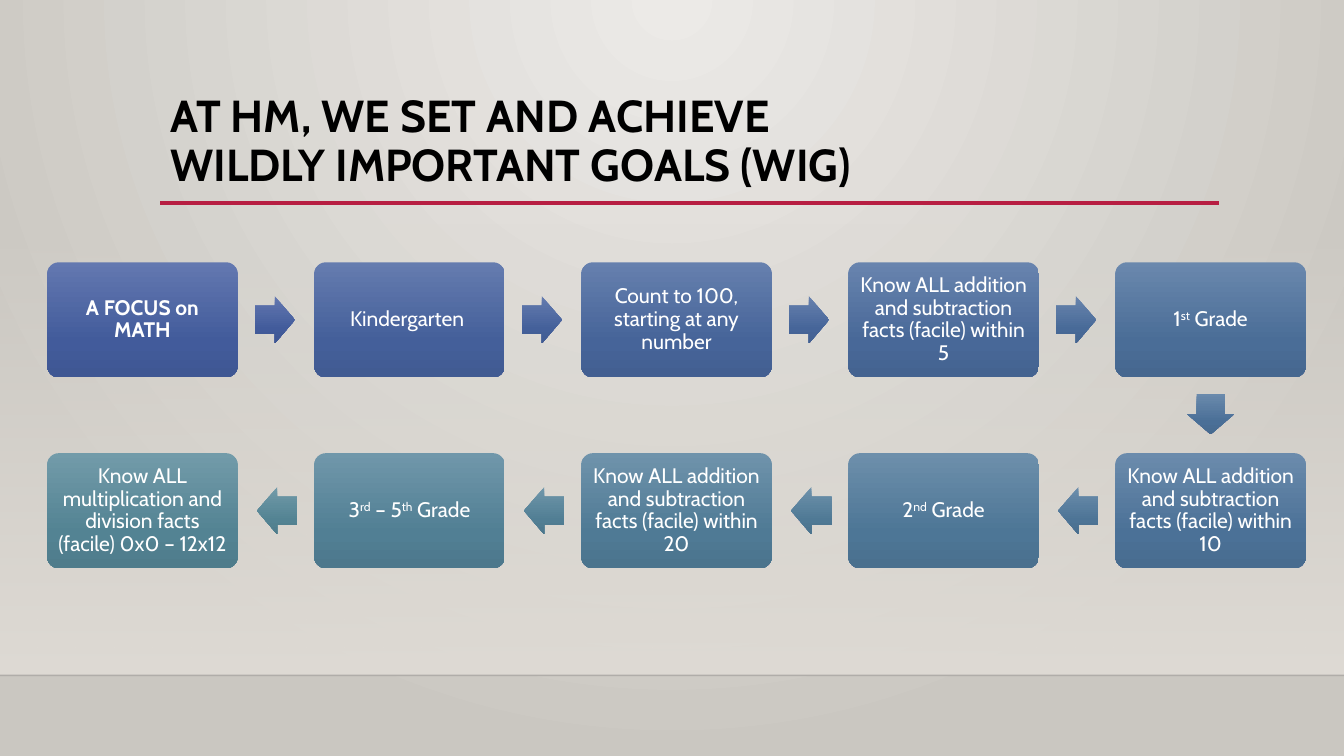
from lxml import etree
from pptx import Presentation
from pptx.dml.color import RGBColor
from pptx.enum import shapes, text
from pptx.oxml import ns
from pptx.util import Cm, Pt

FONT = "Cabin"
BLACK = RGBColor(0x00, 0x00, 0x00)
WHITE = RGBColor(0xFF, 0xFF, 0xFF)
CRIMSON = RGBColor(0xB7, 0x1E, 0x42)
SHELF = RGBColor(0x00, 0x00, 0x01)
WALL = RGBColor(0xDF, 0xDB, 0xD5)
GLOW = RGBColor(0xEC, 0xEA, 0xE7)
STONE = RGBColor(0xCA, 0xC7, 0xC1)
# Gradient stops (position, colour) of the first and last step
INDIGO = [(0, RGBColor(0x63, 0x78, 0xB0)), (69, RGBColor(0x42, 0x5B, 0x9B)),
          (100, RGBColor(0x3F, 0x57, 0x93))]
TEAL = [(0, RGBColor(0x72, 0x9B, 0xA9)), (69, RGBColor(0x53, 0x83, 0x93)),
        (100, RGBColor(0x4F, 0x7C, 0x8B))]

WIDTH, HEIGHT = Cm(33.87), Cm(19.05)
COLUMNS = 5
FACTS = "Know ALL addition and subtraction facts (facile) within "
STEPS = [  # text between carets is raised
    "A FOCUS on MATH", "Kindergarten ", "Count to 100, starting at any number",
    FACTS + "5", "1^st^ Grade", FACTS + "10", "2^nd^ Grade", FACTS + "20",
    "3^rd^ – 5^th^ Grade",
    "Know ALL multiplication and division facts (facile) 0x0 – 12x12",
]


def add_xml(parent, tag, **attributes):
    return etree.SubElement(parent, ns.qn(tag), attributes)


def set_gradient(fill, owner, stops, radial=False):
    """Fill with (position, colour[, opacity]) stops, downwards or from the top centre."""
    fill.gradient()
    gradient = owner.find(".//" + ns.qn("a:gradFill"))
    for child in list(gradient):
        gradient.remove(child)
    gradient.set("rotWithShape", "0")
    stop_list = add_xml(gradient, "a:gsLst")
    for position, colour, *opacity in stops:
        stop = add_xml(stop_list, "a:gs", pos=str(position * 1000))
        tint = add_xml(stop, "a:srgbClr", val=str(colour))
        if opacity:
            add_xml(tint, "a:alpha", val=str(opacity[0] * 1000))
    if radial:
        circle = add_xml(gradient, "a:path", path="circle")
        add_xml(circle, "a:fillToRect", l="43000", t="0", r="43000", b="100000")
    else:
        add_xml(gradient, "a:lin", ang="5400000", scaled="0")


def blend_stops(share):
    return [(position, RGBColor(*(round(a + (b - a) * share) for a, b in zip(first, last))))
            for (position, first), (_, last) in zip(INDIGO, TEAL)]


def add_block(page, kind, left, top, width, height, stops):
    block = page.shapes.add_shape(kind, left, top, width, height)
    block.shadow.inherit = False
    block.line.fill.background()
    set_gradient(block.fill, block.element, stops)
    return block


def add_rule(page, left, right, y, colour, weight):
    rule = page.shapes.add_connector(shapes.MSO_CONNECTOR.STRAIGHT, left, y, right, y)
    rule.line.color.rgb = colour
    rule.line.width = Pt(weight)
    add_xml(rule.element.spPr, "a:effectLst")
    return rule


def write_text(frame, words, size, colour, bold=False, align=text.PP_ALIGN.LEFT,
               anchor=text.MSO_ANCHOR.MIDDLE):
    frame.word_wrap = True
    frame.auto_size = text.MSO_AUTO_SIZE.NONE
    frame.vertical_anchor = anchor
    para = frame.paragraphs[0]
    para.alignment = align
    para.line_spacing = 0.9
    for index, piece in enumerate(words.split("^")):
        for number, line in enumerate(piece.split("\n")):
            if number:
                para.add_line_break()
            span = para.add_run()
            span.text = line
            span.font.name, span.font.size = FONT, Pt(size)
            span.font.bold, span.font.color.rgb = bold, colour
            if index % 2:
                span._r.get_or_add_rPr().set("baseline", "30000")


def draw_backdrop(page):
    set_gradient(page.background.fill, page.element, [(0, GLOW), (100, STONE)], radial=True)
    shelf_y, wall_height = Cm(17.02), Cm(11.4)
    add_block(page, shapes.MSO_SHAPE.RECTANGLE, 0, shelf_y - wall_height, WIDTH, wall_height,
              [(0, WALL, 0), (100, WALL)])
    shelf = add_rule(page, 0, WIDTH, shelf_y, SHELF, 1)
    add_xml(shelf.element.find(".//" + ns.qn("a:srgbClr")), "a:alpha", val="20000")


def draw_title(page, left, top, width, height):
    title = page.shapes.title
    title.left, title.top, title.width, title.height = left, top, width, height
    write_text(title.text_frame, "AT HM, WE SET AND ACHIEVE\nWILDLY IMPORTANT GOALS (WIG)",
               32, BLACK, bold=True, anchor=text.MSO_ANCHOR.TOP)
    add_rule(page, left, left + Cm(26.68), top + Cm(2.88), CRIMSON, 2.5)


def draw_step(page, words, left, top, width, height, stops, bold):
    card = add_block(page, shapes.MSO_SHAPE.ROUNDED_RECTANGLE, left, top, width, height, stops)
    card.adjustments[0] = 0.1
    frame = card.text_frame
    frame.margin_left = frame.margin_right = Cm(0.15)
    frame.margin_top = frame.margin_bottom = Cm(0.15)
    write_text(frame, words, 15, WHITE, bold, text.PP_ALIGN.CENTER)


def draw_arrow(page, centre_x, centre_y, rotation, stops):
    width, height = Cm(1.02), Cm(1.19)
    arrow = add_block(page, shapes.MSO_SHAPE.RIGHT_ARROW, centre_x - width // 2,
                      centre_y - height // 2, width, height, stops)
    arrow.adjustments[0], arrow.adjustments[1] = 0.6, 0.5
    arrow.rotation = rotation


def draw_flow(page, left, top, width, height):
    """Steps run right along the first row, then back left along the second."""
    card_width, card_height = Cm(4.8), Cm(2.9)
    pitch_x = (width - card_width) / (COLUMNS - 1)
    pitch_y = height - card_height
    nudge = Cm(0.03)
    last = len(STEPS) - 1
    for index, words in enumerate(STEPS):
        row, column = divmod(index, COLUMNS)
        if row:
            column = COLUMNS - 1 - column
        x, y = round(left + column * pitch_x), top + row * pitch_y
        draw_step(page, words, x, y, card_width, card_height,
                  blend_stops(index / last), bold=index == 0)
        if index == last:
            continue
        centre_x, centre_y = x + card_width // 2, y + card_height // 2
        if index == COLUMNS - 1:
            centre_y, rotation = centre_y + pitch_y // 2 - nudge, 90
        else:
            way = -1 if row else 1
            centre_x = round(centre_x + way * (pitch_x / 2 - nudge))
            rotation = 180 if row else 0
        draw_arrow(page, centre_x, centre_y, rotation, blend_stops(index / (last - 1)))


def main():
    deck = Presentation()
    deck.slide_width, deck.slide_height = WIDTH, HEIGHT
    page = deck.slides.add_slide(deck.slide_layouts[5])
    draw_backdrop(page)
    draw_title(page, Cm(4.04), Cm(2.24), Cm(26.67), Cm(2.92))
    draw_flow(page, Cm(1.19), Cm(6.61), Cm(31.72), Cm(7.71))
    deck.save("out.pptx")


if __name__ == "__main__":
    main()
